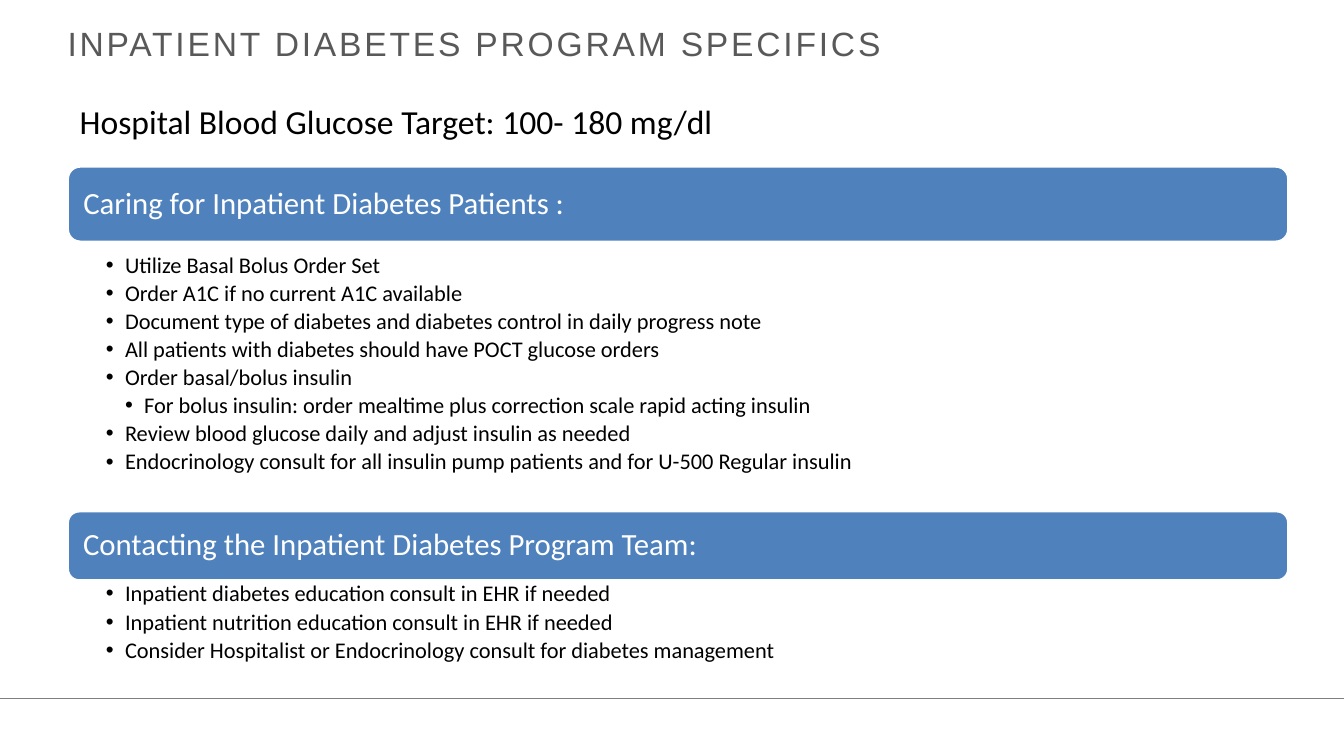
from dataclasses import dataclass

from lxml.etree import SubElement
from pptx import Presentation
from pptx.dml.color import RGBColor
from pptx.enum.shapes import MSO_CONNECTOR, MSO_SHAPE
from pptx.enum.text import MSO_ANCHOR, PP_ALIGN
from pptx.oxml.ns import qn
from pptx.shapes.base import BaseShape
from pptx.slide import Slide
from pptx.util import Inches, Pt

COLORS = {
    "title": "595959",
    "body": "000000",
    "banner": "4F81BD",
    "white": "FFFFFF",
    "rule": "808080",
}
LEFT, WIDTH = 0.67, 12.11
HANGING = 0.19


@dataclass(frozen=True)
class Bullet:
    text: str
    level: int = 1


@dataclass(frozen=True)
class Section:
    heading: str
    top: float
    height: float
    list_top: float
    list_height: float
    bullets: tuple[Bullet, ...]


SECTIONS = (
    Section("Caring for Inpatient Diabetes Patients :", 1.65, 0.75, 2.5, 2.5, (
        Bullet("Utilize Basal Bolus Order Set"),
        Bullet("Order A1C if no current A1C available"),
        Bullet("Document type of diabetes and diabetes control in daily progress note"),
        Bullet("All patients with diabetes should have POCT glucose orders"),
        Bullet("Order basal/bolus insulin"),
        Bullet("For bolus insulin: order mealtime plus correction scale rapid acting insulin", 2),
        Bullet("Review blood glucose daily and adjust insulin as needed"),
        Bullet("Endocrinology consult for all insulin pump patients and for U-500 Regular insulin"),
    )),
    Section("Contacting the Inpatient Diabetes Program Team:", 5.07, 0.69, 5.76, 1, (
        Bullet("Inpatient diabetes education consult in EHR if needed"),
        Bullet("Inpatient nutrition education consult in EHR if needed"),
        Bullet("Consider Hospitalist or Endocrinology consult for diabetes management"),
    )),
)


def color(name: str) -> RGBColor:
    return RGBColor.from_string(COLORS[name])


def write(holder: BaseShape, *lines: Bullet, size: float, ink: str = "body",
          font: str = "Calibri", anchor: MSO_ANCHOR = MSO_ANCHOR.MIDDLE,
          insets: tuple[float, float, float, float] = (0.12, 0.09, 0.12, 0.09),
          bulleted: bool = False, line_spacing: float = 0.9,
          space_after: float = 0, tracking: float = 0) -> None:
    frame = holder.text_frame
    frame.word_wrap = True
    frame.vertical_anchor = anchor
    (frame.margin_left, frame.margin_top,
     frame.margin_right, frame.margin_bottom) = map(Inches, insets)
    for index, line in enumerate(lines):
        paragraph = frame.add_paragraph() if index else frame.paragraphs[0]
        if bulleted:
            paragraph.level = line.level
            properties = paragraph._p.get_or_add_pPr()
            properties.set("marL", str(Inches(HANGING * line.level)))
            properties.set("indent", str(-Inches(HANGING)))
            SubElement(properties, qn("a:buFont"), typeface="Arial")
            SubElement(properties, qn("a:buChar"), char="•")
        paragraph.alignment = PP_ALIGN.LEFT
        paragraph.line_spacing = line_spacing
        paragraph.space_after = Pt(space_after)
        run = paragraph.add_run()
        run.text = line.text
        run.font.size = Pt(size)
        run.font.name = font
        run.font.color.rgb = color(ink)
        if tracking:
            run.font._element.set("spc", str(round(tracking * 100)))


def add_text_area(slide: Slide, top: float, height: float) -> BaseShape:
    return slide.shapes.add_textbox(
        Inches(LEFT), Inches(top), Inches(WIDTH), Inches(height))


def add_section(slide: Slide, section: Section) -> None:
    banner = slide.shapes.add_shape(
        MSO_SHAPE.ROUNDED_RECTANGLE, Inches(LEFT), Inches(section.top),
        Inches(WIDTH), Inches(section.height))
    banner.shadow.inherit = False
    banner.fill.solid()
    banner.fill.fore_color.rgb = color("banner")
    banner.line.color.rgb = color("white")
    banner.line.width = Pt(2)
    write(banner, Bullet(section.heading), size=22, ink="white")
    write(add_text_area(slide, section.list_top, section.list_height),
          *section.bullets, size=16, anchor=MSO_ANCHOR.TOP, bulleted=True,
          insets=(0.38, 0.02, 0.12, 0.02), space_after=2.8)


def add_footer_rule(slide: Slide, width: int) -> None:
    rule = slide.shapes.add_connector(
        MSO_CONNECTOR.STRAIGHT, 0, Inches(6.93), width, Inches(6.93))
    rule.line.color.rgb = color("rule")
    rule.line.width = Pt(1)
    SubElement(rule._element.spPr, qn("a:effectLst"))


def main() -> None:
    deck = Presentation()
    deck.slide_width, deck.slide_height = Inches(13.33), Inches(7.5)
    slide = deck.slides.add_slide(deck.slide_layouts[6])
    add_footer_rule(slide, deck.slide_width)
    write(add_text_area(slide, 0.2, 0.46),
          Bullet("INPATIENT DIABETES PROGRAM SPECIFICS"), size=24, ink="title",
          font="Arial", insets=(0, 0, 0, 0), line_spacing=1, tracking=2)
    write(add_text_area(slide, 0.92, 0.56),
          Bullet("Hospital Blood Glucose Target: 100- 180 mg/dl"),
          size=24, line_spacing=1)
    for section in SECTIONS:
        add_section(slide, section)
    deck.save("out.pptx")


if __name__ == "__main__":
    main()
